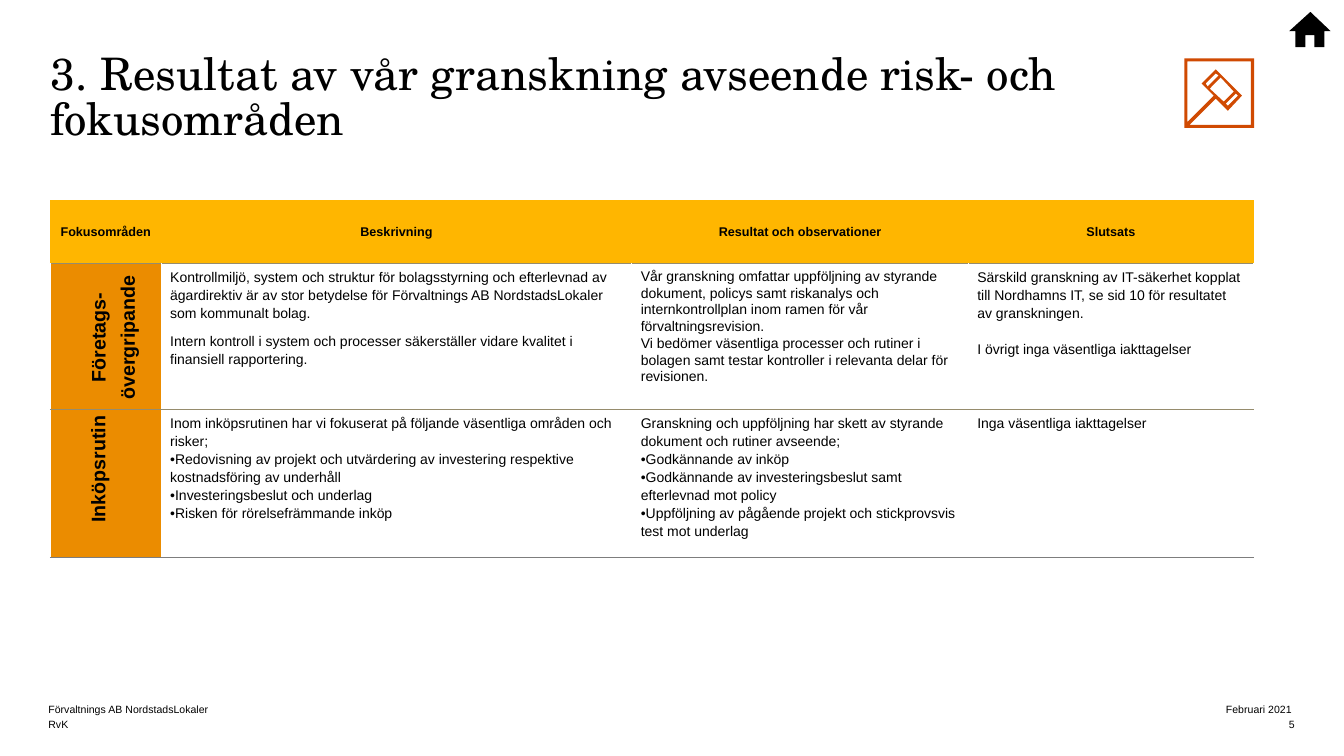
from lxml import etree
from pptx import Presentation
from pptx.dml.color import RGBColor
from pptx.enum.text import MSO_ANCHOR, MSO_AUTO_SIZE, PP_ALIGN
from pptx.oxml.ns import qn
from pptx.util import Cm, Pt

LEFT, CENTER, RIGHT = PP_ALIGN.LEFT, PP_ALIGN.CENTER, PP_ALIGN.RIGHT
TOP, MIDDLE, BOTTOM = MSO_ANCHOR.TOP, MSO_ANCHOR.MIDDLE, MSO_ANCHOR.BOTTOM
NO_AUTOFIT = MSO_AUTO_SIZE.NONE
TITLE_ONLY = 5

COLORS = {
    "text": "000000",
    "header": "FFB600",
    "area": "EB8C00",
    "icon": "D04A02",
    "gap": "FFFFFF",
    "rule": "968C6D",
    "last_rule": "7D7D7D",
}
ICON_UNIT = Cm(0.0254)  # one unit of the icon outlines


def color(key):
    return RGBColor.from_string(COLORS[key])


def set_all(target, values):
    for attribute, value in values.items():
        setattr(target, attribute, value)


class SlideBuilder:
    body_font = "Arial"
    title_font = "TeX Gyre Schola"

    def __init__(self, deck):
        self.slide = deck.slides.add_slide(deck.slide_layouts[TITLE_ONLY])

    def fill_text(self, frame, paragraphs, size, font=None, bold=False,
                  align=LEFT, spacing=1.0, gap=0):
        """Write the paragraphs; gap is the space in points between them."""
        for index, words in enumerate(paragraphs):
            paragraph = frame.paragraphs[0] if index == 0 else frame.add_paragraph()
            set_all(paragraph, {"alignment": align, "line_spacing": spacing,
                                "space_before": Pt(gap if index else 0)})
            run = paragraph.add_run()
            run.text = words
            set_all(run.font, {"name": font or self.body_font,
                               "size": Pt(size), "bold": bold})
            run.font.color.rgb = color("text")

    def set_frame(self, frame, anchor, inset):
        set_all(frame, {"word_wrap": True, "auto_size": NO_AUTOFIT,
                        "vertical_anchor": anchor,
                        "margin_left": inset, "margin_right": inset,
                        "margin_top": inset, "margin_bottom": inset})

    def title(self, words, box):
        title = self.slide.shapes.title
        set_all(title, dict(zip(("left", "top", "width", "height"), box)))
        self.set_frame(title.text_frame, TOP, 0)
        self.fill_text(title.text_frame, [words], 32, self.title_font, spacing=0.85)

    def text(self, paragraphs, box, size, anchor=TOP, inset=0, rotation=0, **style):
        label = self.slide.shapes.add_textbox(*box)
        label.rotation = rotation
        self.set_frame(label.text_frame, anchor, inset)
        self.fill_text(label.text_frame, paragraphs, size, **style)

    def outline(self, contours, left, top, fill):
        first, *others = contours
        builder = self.slide.shapes.build_freeform(*first[0], scale=ICON_UNIT)
        builder.add_line_segments(first[1:], close=True)
        for contour in others:
            builder.move_to(*contour[0])
            builder.add_line_segments(contour[1:], close=True)
        icon = builder.convert_to_shape(left, top)
        icon.shadow.inherit = False
        icon.fill.solid()
        icon.fill.fore_color.rgb = color(fill)
        icon.line.fill.background()

    def table(self, left, top, widths, heights):
        grid = self.slide.shapes.add_table(
            len(heights), len(widths), left, top, sum(widths), sum(heights)).table
        grid.horz_banding = False
        for column, width in zip(grid.columns, widths):
            column.width = width
        for row, height in zip(grid.rows, heights):
            row.height = height
        return grid

    def cell(self, cell, paragraphs, fill, borders, anchor=TOP, top=0, **style):
        set_all(cell, {"vertical_anchor": anchor, "margin_left": Cm(0.23),
                       "margin_right": Cm(0.23), "margin_top": top,
                       "margin_bottom": 0})
        self.fill_text(cell.text_frame, paragraphs, **style)
        # Borders come before the fill in the cell properties
        properties = cell._tc.get_or_add_tcPr()
        for side in ("L", "R", "T", "B"):
            key, width = borders.get(side, (None, 0))
            line = etree.SubElement(properties, qn(f"a:ln{side}"), w=str(Pt(width)))
            paint = etree.SubElement(line, qn("a:solidFill" if key else "a:noFill"))
            if key:
                etree.SubElement(paint, qn("a:srgbClr"), val=COLORS[key])
        if fill:
            cell.fill.solid()
            cell.fill.fore_color.rgb = color(fill)
        else:
            cell.fill.background()


HEADINGS = ["Fokusområden", "Beskrivning", "Resultat och observationer", "Slutsats"]

# Per row: paragraphs, line spacing and paragraph gap of each cell
FINDINGS = [
    [
        ([], 1, 0),
        (["Kontrollmiljö, system och struktur för bolagsstyrning och efterlevnad av "
          "ägardirektiv är av stor betydelse för Förvaltnings AB NordstadsLokaler "
          "som kommunalt bolag.",
          "Intern kontroll i system och processer säkerställer vidare kvalitet i "
          "finansiell rapportering."], 1.15, 7),
        (["Vår granskning omfattar uppföljning av styrande dokument, policys samt "
          "riskanalys och internkontrollplan inom ramen för vår förvaltningsrevision.",
          "Vi bedömer väsentliga processer och rutiner i bolagen samt testar "
          "kontroller i relevanta delar för revisionen."], 1.07, 0),
        (["Särskild granskning av IT-säkerhet kopplat till Nordhamns IT, se sid 10 "
          "för resultatet av granskningen.",
          "I övrigt inga väsentliga iakttagelser"], 1.15, 13),
    ],
    [
        ([], 1, 0),
        (["Inom inköpsrutinen har vi fokuserat på följande väsentliga områden och risker;",
          "•Redovisning av projekt och utvärdering av investering respektive "
          "kostnadsföring av underhåll",
          "•Investeringsbeslut och underlag",
          "•Risken för rörelsefrämmande inköp"], 1.15, 0),
        (["Granskning och uppföljning har skett av styrande dokument och rutiner avseende;",
          "•Godkännande av inköp",
          "•Godkännande av investeringsbeslut samt efterlevnad mot policy",
          "•Uppföljning av pågående projekt och stickprovsvis test mot underlag"], 1.15, 0),
        (["Inga väsentliga iakttagelser"], 1.15, 0),
    ],
]

GAVEL = [
    [(0, 0), (0, 69), (69, 69), (69, 0)],
    [(66, 66), (5, 66), (31, 40), (43, 52), (57, 37), (31, 11), (17, 25),
     (29, 37), (3, 63), (3, 3), (66, 3)],
    [(21, 25), (31, 15), (34, 17), (23, 28)],
    [(36, 19), (49, 33), (39, 43), (25, 30)],
    [(53, 37), (43, 47), (41, 45), (51, 35)],
]
HOUSE = [[(16, 35), (16, 23), (25, 23), (25, 35), (35, 35), (35, 19), (41, 19),
          (21, 0), (0, 19), (6, 19), (6, 35)]]


def main():
    deck = Presentation()
    deck.slide_width, deck.slide_height = Cm(33.87), Cm(19.05)
    page = SlideBuilder(deck)

    # Title
    page.title("3. Resultat av vår granskning avseende risk- och fokusområden",
               (Cm(1.27), Cm(1.35), Cm(30.3), Cm(2.95)))

    # Table of focus areas
    areas = page.table(Cm(1.27), Cm(5.05),
                       [Cm(w) for w in (2.79, 11.86, 8.48, 7.19)],
                       [Cm(h) for h in (1.6, 3.68, 3.71)])
    for column, heading in enumerate(HEADINGS):
        page.cell(areas.cell(0, column), [heading], "header", {"B": ("rule", 0.75)},
                  MIDDLE, size=9, bold=True, align=CENTER, spacing=1.07)
    for row, (findings, bottom) in enumerate(zip(FINDINGS, ("rule", "last_rule")), 1):
        borders = {"L": ("gap", 1), "R": ("gap", 1),
                   "T": ("rule", 0.75), "B": (bottom, 0.75)}
        for column, (paragraphs, spacing, gap) in enumerate(findings):
            page.cell(areas.cell(row, column), paragraphs,
                      None if column else "area", borders, top=Cm(0.1),
                      size=10, spacing=spacing, gap=gap)

    # Upright names of the focus areas
    upright = {"size": 14, "inset": Cm(0.25), "rotation": 270, "bold": True}
    page.text(["Företags-", "övergripande"],
              (Cm(0.08), Cm(7.85), Cm(4.98), Cm(1.3)), align=CENTER, gap=4, **upright)
    page.text(["Inköpsrutin"], (Cm(0.89), Cm(11.1), Cm(3.35), Cm(1.3)), **upright)

    # Icons
    page.outline(GAVEL, Cm(29.85), Cm(1.47), "icon")
    page.outline(HOUSE, Cm(32.49), Cm(0.3), "text")

    # Footer
    footer = [("Förvaltnings AB NordstadsLokaler", "Februari 2021 "), ("RvK", "5")]
    for line, (owner, detail) in enumerate(footer):
        top = Cm(17.65 + 0.38 * line)
        page.text([owner], (Cm(1.22), top, Cm(15.21), Cm(0.38)), 7.5, BOTTOM)
        page.text([detail], (Cm(22.83), top, Cm(9.8), Cm(0.38)), 7.5, BOTTOM, align=RIGHT)

    deck.save("out.pptx")


if __name__ == "__main__":
    main()
